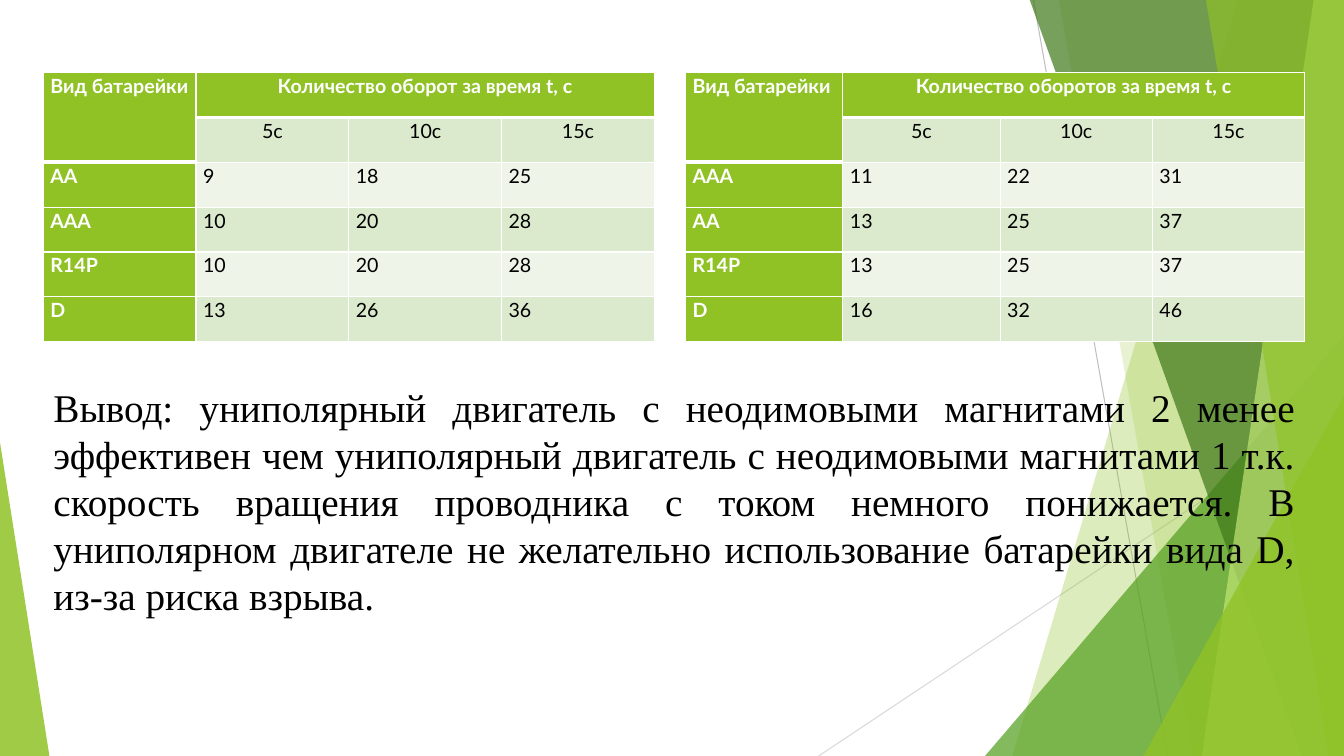
from lxml import etree
from pptx import Presentation
from pptx.dml.color import RGBColor
from pptx.enum.shapes import MSO_CONNECTOR, MSO_SHAPE
from pptx.enum.text import MSO_ANCHOR, MSO_AUTO_SIZE, PP_ALIGN
from pptx.oxml.ns import qn
from pptx.util import Inches, Pt

STRAIGHT, TRIANGLE = MSO_CONNECTOR.STRAIGHT, MSO_SHAPE.ISOSCELES_TRIANGLE
JUSTIFY, CENTER = PP_ALIGN.JUSTIFY, PP_ALIGN.CENTER

WIDTH, HEIGHT = 13.33, 7.5
LEFT, TABLE_TOP, ROW_HEIGHT = 0.43, 0.72, 2.67 / 6
SECTION_LAYOUT = 2
COLORS = {
    "green": "90C226", "leaf": "54A021", "forest": "3F7819", "lime": "C0E474",
    "pale": "EEF4E8", "soft": "DBE9CD", "gray": "BFBFBF", "silver": "D9D9D9",
    "white": "FFFFFF", "black": "000000",
}

CONCLUSION = (
    "Вывод: униполярный двигатель с неодимовыми магнитами 2 менее эффективен чем "
    "униполярный двигатель с неодимовыми магнитами 1 т.к. скорость вращения проводника "
    "с током немного понижается. В униполярном двигателе не желательно использование "
    "батарейки вида D, из-за риска взрыва."
)
TIMES = ("", "5с", "10с", "15с")
TABLES = [
    {"left": LEFT, "columns": (1.515,) * 4, "rows": [
        ("Вид батарейки", "Количество оборот за время t, с", "", ""), TIMES,
        ("АА", "9", "18", "25"), ("ААА", "10", "20", "28"),
        ("R14P", "10", "20", "28"), ("D", "13", "26", "36")]},
    {"left": 6.8, "columns": (1.56, 1.56, 1.51, 1.51), "rows": [
        ("Вид батарейки", "Количество оборотов за время t, с", "", ""), TIMES,
        ("ААА", "11", "22", "31"), ("АА", "13", "25", "37"),
        ("R14P", "13", "25", "37"), ("D", "16", "32", "46")]},
]

# Lines: start, end, colour
LINES = [((10.25, 0), (11.58, HEIGHT), "gray"), ((WIDTH, 4.03), (8.12, HEIGHT), "silver")]
# Bands reach the right edge: top left x, bottom left x, colour, opacity
BACK_BANDS = [(12.28, 10.04, "green", 30), (10.5, 11.83, "green", 20)]
FRONT_BANDS = [(10.21, 12.91, "forest", 70), (13.03, 11.92, "lime", 70),
               (11.96, 13.18, "green", 65)]
# Triangles stand on the bottom edge: left, width, height, apex, colour, opacity
BACK_TRIANGLE = (9.77, 3.56, 4.17, 1, "leaf", 72)
FRONT_TRIANGLES = [(11.34, 1.99, 3.57, 1, "green", 80), (0, 0.49, 3.11, 0, "green", 85)]


def rgb(name):
    return RGBColor.from_string(COLORS[name])


def paint(shape, color, opacity):
    shape.shadow.inherit = False
    shape.fill.solid()
    shape.fill.fore_color.rgb = rgb(color)
    shape.line.fill.background()
    tint = shape.element.spPr.find(".//" + qn("a:srgbClr"))
    etree.SubElement(tint, qn("a:alpha")).set("val", str(opacity * 1000))


def add_line(shapes, start, end, color):
    line = shapes.add_connector(STRAIGHT, *(Inches(value) for value in start + end))
    line.line.color.rgb = rgb(color)
    line.line.width = Pt(0.75)
    etree.SubElement(line.element.spPr, qn("a:effectLst"))


def add_band(shapes, top_x, bottom_x, color, opacity):
    corners = [(top_x, -0.01), (WIDTH, -0.01), (WIDTH, HEIGHT), (bottom_x, HEIGHT)]
    points = [(Inches(x), Inches(y)) for x, y in corners]
    builder = shapes.build_freeform(*points[0])
    builder.add_line_segments(points[1:], close=True)
    paint(builder.convert_to_shape(), color, opacity)


def add_triangle(shapes, left, width, height, apex, color, opacity):
    box = (left, HEIGHT - height, width, height)
    triangle = shapes.add_shape(TRIANGLE, *(Inches(value) for value in box))
    triangle.adjustments[0] = apex
    paint(triangle, color, opacity)


def write(frame, text, paragraph_format, font_format, color):
    paragraph = frame.paragraphs[0]
    run = paragraph.add_run()
    run.text = text
    for target, values in ((paragraph, paragraph_format), (run.font, font_format)):
        for name, value in values.items():
            setattr(target, name, value)
    run.font.color.rgb = rgb(color)


def add_header_borders(cell):
    properties = cell._tc.get_or_add_tcPr()
    for position, (side, points) in enumerate((("L", 1), ("R", 1), ("T", 1), ("B", 3))):
        border = etree.Element(qn("a:ln" + side), w=str(Pt(points)))
        fill = etree.SubElement(border, qn("a:solidFill"))
        etree.SubElement(fill, qn("a:srgbClr"), val=COLORS["white"])
        properties.insert(position, border)


def add_battery_table(shapes, left, columns, rows):
    box = (left, TABLE_TOP, sum(columns), ROW_HEIGHT * len(rows))
    table = shapes.add_table(len(rows), len(columns), *(Inches(v) for v in box)).table
    table.first_col = True
    for column, width in zip(table.columns, columns):
        column.width = Inches(width)
    table.cell(0, 0).merge(table.cell(1, 0))
    table.cell(0, 1).merge(table.cell(0, len(columns) - 1))
    margins = {"margin_left": Inches(0.07), "margin_right": Inches(0.07),
               "margin_top": 0, "margin_bottom": 0}
    for i, row in enumerate(rows):
        table.rows[i].height = Inches(ROW_HEIGHT)
        for j, text in enumerate(row):
            cell = table.cell(i, j)
            heading = i == 0 or j == 0
            for name, value in margins.items():
                setattr(cell, name, value)
            cell.fill.solid()
            cell.fill.fore_color.rgb = rgb("green" if heading else ("pale", "soft")[i % 2])
            if i == 0 or (i, j) == (1, 0):
                add_header_borders(cell)
            if text:
                alignment = CENTER if i < 2 and j > 0 else JUSTIFY
                write(cell.text_frame, text,
                      {"alignment": alignment, "line_spacing": 1.07, "space_after": Pt(8)},
                      {"name": "Lato", "size": Pt(14), "bold": heading},
                      "white" if heading else "black")


def place_conclusion(body):
    box = {"left": LEFT, "top": 3.75, "width": 12.51, "height": 2.95}
    for name, value in box.items():
        setattr(body, name, Inches(value))
    frame = body.text_frame
    frame.word_wrap = True
    frame.auto_size = MSO_AUTO_SIZE.NONE
    frame.vertical_anchor = MSO_ANCHOR.TOP
    write(frame, CONCLUSION, {"alignment": JUSTIFY, "space_before": Pt(10)},
          {"name": "Times New Roman", "size": Pt(28)}, "black")


def main():
    presentation = Presentation()
    presentation.slide_width, presentation.slide_height = Inches(WIDTH), Inches(HEIGHT)
    slide = presentation.slides.add_slide(presentation.slide_layouts[SECTION_LAYOUT])
    shapes = slide.shapes
    title, body = slide.placeholders
    tree = title.element.getparent()
    tree.remove(title.element)

    for line in LINES:
        add_line(shapes, *line)
    for band in BACK_BANDS:
        add_band(shapes, *band)
    add_triangle(shapes, *BACK_TRIANGLE)
    for band in FRONT_BANDS:
        add_band(shapes, *band)
    for triangle in FRONT_TRIANGLES:
        add_triangle(shapes, *triangle)

    place_conclusion(body)
    tree.append(body.element)
    for table in TABLES:
        add_battery_table(shapes, **table)
    presentation.save("out.pptx")


if __name__ == "__main__":
    main()
